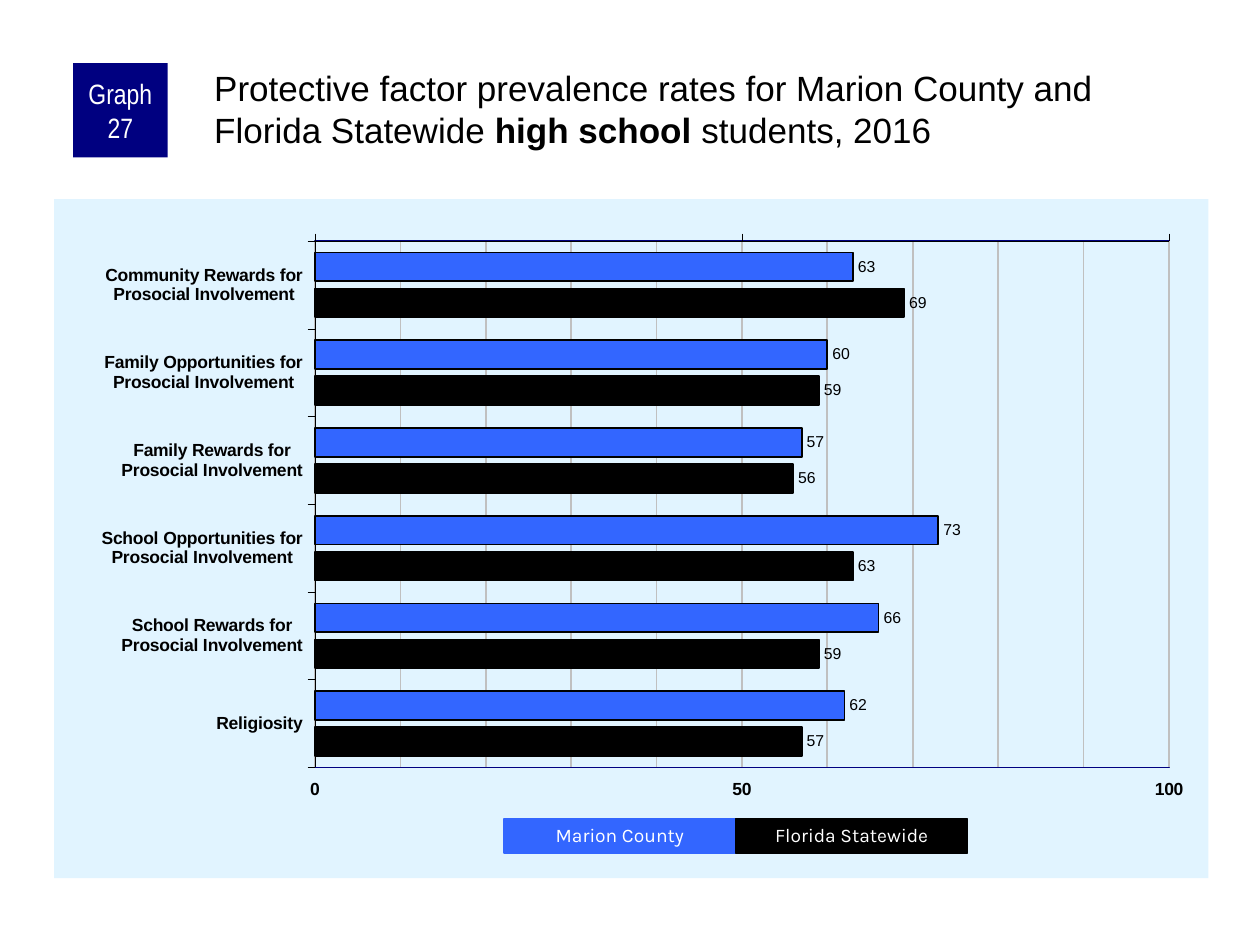
from copy import deepcopy

from lxml import etree
from pptx import Presentation
from pptx.chart.data import CategoryChartData
from pptx.dml.color import RGBColor
from pptx.enum.chart import XL_CHART_TYPE, XL_LABEL_POSITION, XL_TICK_LABEL_POSITION, XL_TICK_MARK
from pptx.enum.shapes import MSO_SHAPE
from pptx.enum.text import MSO_ANCHOR, PP_ALIGN
from pptx.oxml import parse_xml
from pptx.oxml.ns import nsdecls, qn
from pptx.util import Inches, Pt

BAR_CLUSTERED = XL_CHART_TYPE.BAR_CLUSTERED
OUTSIDE_END = XL_LABEL_POSITION.OUTSIDE_END
LABELS_HIGH = XL_TICK_LABEL_POSITION.HIGH
TICK_OUTSIDE = XL_TICK_MARK.OUTSIDE
RECTANGLE = MSO_SHAPE.RECTANGLE
MIDDLE = MSO_ANCHOR.MIDDLE
CENTER = PP_ALIGN.CENTER

BLACK = RGBColor(0x00, 0x00, 0x00)
WHITE = RGBColor(0xFF, 0xFF, 0xFF)
NAVY = RGBColor(0x00, 0x00, 0x80)
BLUE = RGBColor(0x33, 0x66, 0xFF)
PALE_BLUE = RGBColor(0xE1, 0xF4, 0xFF)
GRAY = RGBColor(0xC0, 0xC0, 0xC0)

CATEGORIES = [
    "Community Rewards for\nProsocial Involvement",
    "Family Opportunities for\nProsocial Involvement",
    "Family Rewards for\nProsocial Involvement",
    "School Opportunities for\nProsocial Involvement",
    "School Rewards for\nProsocial Involvement",
    "Religiosity",
]
SERIES = [
    ("Marion County", BLUE, (63, 60, 57, 73, 66, 62)),
    ("Florida Statewide", BLACK, (69, 59, 56, 63, 59, 57)),
]


def style_font(font, name, size, color, bold=False):
    font.name = name
    font.size = Pt(size)
    font.color.rgb = color
    font.bold = bold


def style_line(line, color, width):
    line.color.rgb = color
    line.width = Pt(width)


def add_label_box(slide, left, top, width, height, text, fill, font_name, size):
    shape = slide.shapes.add_shape(RECTANGLE, left, top, width, height)
    shape.shadow.inherit = False
    shape.fill.solid()
    shape.fill.fore_color.rgb = fill
    shape.line.fill.background()
    frame = shape.text_frame
    frame.text = text
    frame.word_wrap = True
    frame.vertical_anchor = MIDDLE
    frame.margin_left = frame.margin_right = Inches(0.05)
    frame.margin_top = frame.margin_bottom = 0
    paragraph = frame.paragraphs[0]
    paragraph.alignment = CENTER
    style_font(paragraph.runs[0].font, font_name, size, WHITE)
    return shape


def add_title(slide, left, top, width, height):
    frame = slide.shapes.add_textbox(left, top, width, height).text_frame
    frame.word_wrap = True
    frame.margin_left = frame.margin_top = Inches(0.03)
    frame.margin_right = frame.margin_bottom = 0
    parts = [
        ("Protective factor prevalence rates for Marion County and Florida Statewide ", False),
        ("high school ", True),
        ("students, 2016", False),
    ]
    for text, bold in parts:
        run = frame.paragraphs[0].add_run()
        run.text = text
        style_font(run.font, "Arial", 20, BLACK, bold)


def style_plot_area(chart):
    """Fill the chart, outline the plot and fix its inner position."""
    fill = f'<a:solidFill {nsdecls("a")}><a:srgbClr val="{PALE_BLUE}"/></a:solidFill>'
    chart_space = chart.element
    background = parse_xml(
        f'<c:spPr {nsdecls("c", "a")}>{fill}<a:ln><a:noFill/></a:ln></c:spPr>')
    chart_space.find(qn("c:chart")).addnext(background)

    plot_area = chart_space.find(qn("c:chart")).find(qn("c:plotArea"))
    for old_layout in plot_area.findall(qn("c:layout")):
        plot_area.remove(old_layout)
    layout = etree.Element(qn("c:layout"))
    manual = etree.SubElement(layout, qn("c:manualLayout"))
    settings = [("layoutTarget", "inner"), ("xMode", "edge"), ("yMode", "edge"),
                ("x", "0.226"), ("y", "0.062"), ("w", "0.74"), ("h", "0.775")]
    for tag, value in settings:
        etree.SubElement(manual, qn(f"c:{tag}")).set("val", value)
    plot_area.insert(0, layout)
    plot_area.append(parse_xml(
        f'<c:spPr {nsdecls("c", "a")}><a:noFill/><a:ln w="12700"><a:solidFill>'
        f'<a:srgbClr val="{NAVY}"/></a:solidFill></a:ln></c:spPr>'))


def add_gridlines(value_axis):
    """Give the major and minor gridlines the same gray line."""
    value_axis.has_major_gridlines = value_axis.has_minor_gridlines = True
    style_line(value_axis.major_gridlines.format.line, GRAY, 1)
    # python-pptx formats only major gridlines, so the minor ones share their XML
    axis_element = value_axis.major_gridlines.format.line and value_axis.format.element \
        if hasattr(value_axis.format, "element") else value_axis._element
    major = axis_element.find(qn("c:majorGridlines"))
    minor = axis_element.find(qn("c:minorGridlines"))
    minor.append(deepcopy(major.find(qn("c:spPr"))))


def add_rates_chart(slide, left, top, width, height):
    chart_data = CategoryChartData()
    chart_data.categories = CATEGORIES
    for name, _, values in SERIES:
        chart_data.add_series(name, values)
    chart = slide.shapes.add_chart(
        BAR_CLUSTERED, left, top, width, height, chart_data).chart
    chart.has_legend = False
    chart.has_title = False
    style_plot_area(chart)
    style_font(chart.font, "Arial", 11.8, BLACK)

    # Axes
    category_axis, value_axis = chart.category_axis, chart.value_axis
    for axis in (category_axis, value_axis):
        axis.major_tick_mark = TICK_OUTSIDE
        style_font(axis.tick_labels.font, "Arial", 10, BLACK, True)
        style_line(axis.format.line, BLACK, 0.25)
    category_axis.reverse_order = True
    value_axis.tick_label_position = LABELS_HIGH
    value_axis.minimum_scale, value_axis.maximum_scale = 0, 100
    value_axis.major_unit, value_axis.minor_unit = 50, 10
    add_gridlines(value_axis)

    # Bars and value labels
    plot = chart.plots[0]
    plot.gap_width, plot.overlap = 80, -25
    plot.vary_by_categories = False
    for series, (_, color, _) in zip(plot.series, SERIES):
        series.format.fill.solid()
        series.format.fill.fore_color.rgb = color
        style_line(series.format.line, BLACK, 1)
        labels = series.data_labels
        labels.show_value = True
        labels.position = OUTSIDE_END
        style_font(labels.font, "Arial", 9, BLACK)


def add_legend(slide, left, top, width, height):
    item_width = width // len(SERIES)
    for index, (name, color, _) in enumerate(SERIES):
        shape = add_label_box(slide, left + index * item_width, top,
                              item_width, height, name, color, "Karla", 11)
        style_line(shape.line, color, 0.75)
        shape.text_frame.paragraphs[0].line_spacing = 0.9


def main():
    presentation = Presentation()
    presentation.slide_width, presentation.slide_height = Inches(10), Inches(7.5)
    slide = presentation.slides.add_slide(presentation.slide_layouts[6])
    add_rates_chart(slide, Inches(0.43), Inches(1.58), Inches(9.16), Inches(5.39))
    add_label_box(slide, Inches(0.58), Inches(0.5), Inches(0.75), Inches(0.75),
                  "Graph 27", NAVY, "Arial Narrow", 16)
    add_title(slide, Inches(1.67), Inches(0.5), Inches(7.92), Inches(0.83))
    add_legend(slide, Inches(4), Inches(6.5), Inches(3.68), Inches(0.27))
    presentation.save("out.pptx")


if __name__ == "__main__":
    main()
